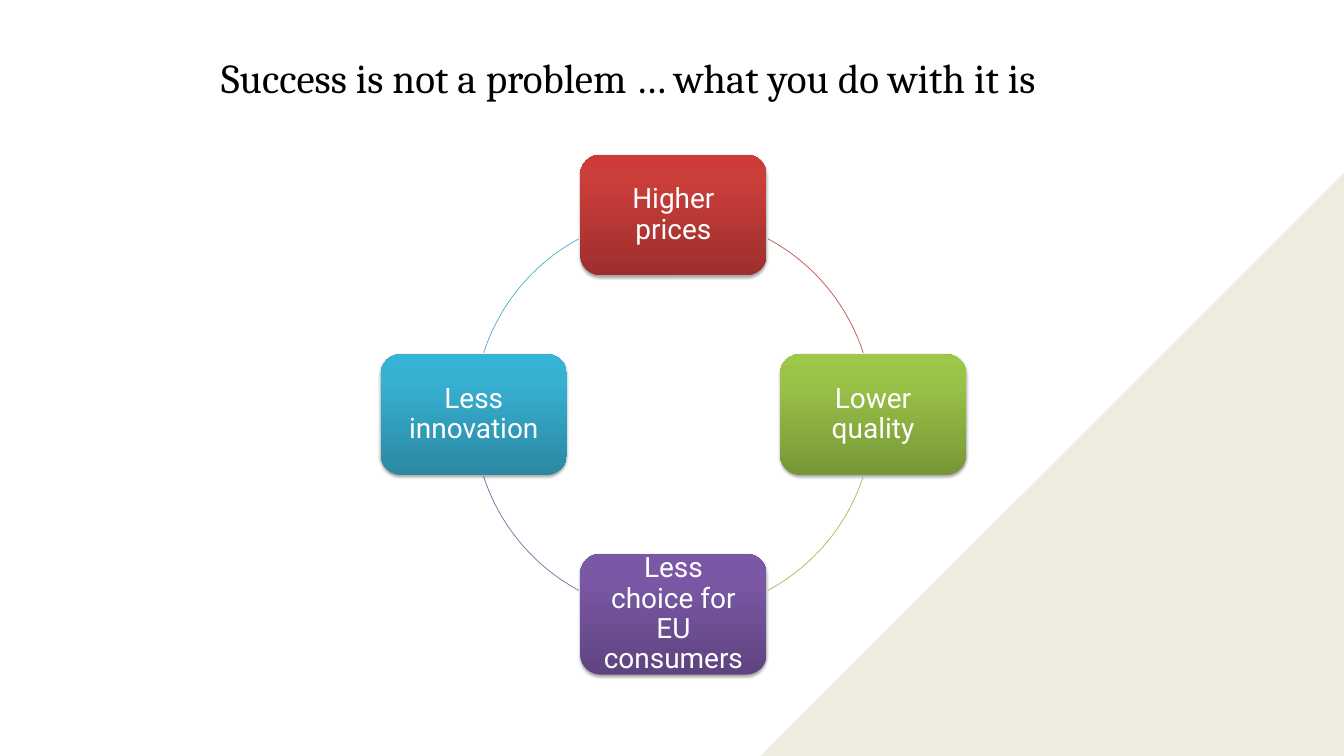
from copy import deepcopy
from math import cos, radians, sin

from lxml import etree
from pptx import Presentation
from pptx.dml.color import RGBColor
from pptx.enum import shapes, text
from pptx.oxml import ns
from pptx.util import Cm, Pt

COLORS = {"text": "000000", "card text": "FFFFFF", "corner": "EEECE1", "shadow": "000000"}

# Clockwise from the top: label, card gradient (bottom to top), colour of the arc that follows
EFFECTS = [
    ("Higher prices", ("9C2F2D", "CB3E3A", "CE3B37"), "C0504D"),
    ("Lower quality", ("779737", "9BC348", "9DC746"), "9BBB59"),
    ("Less choice for EU consumers", ("5F4480", "7B58A6", "7C57A8"), "8064A2"),
    ("Less innovation", ("2A88A2", "37B1D2", "34B4D6"), "4BACC6"),
]
GRADIENT_POSITIONS = (0, 0.8, 1)
CARD_WIDTH, CARD_HEIGHT = 7.04, 4.57
# Arcs stop short of the cards, measured in degrees from the horizontal axis
SIDE_GAP, TOP_GAP = 18, 28.3


def rgb(value):
    return RGBColor.from_string(value)


def add_corner(page, left, top, width, height):
    corner = page.shapes.add_shape(
        shapes.MSO_SHAPE.RECTANGLE, Cm(left), Cm(top), Cm(width), Cm(height))
    corner.rotation = 315
    corner.shadow.inherit = False
    corner.fill.solid()
    corner.fill.fore_color.rgb = rgb(COLORS["corner"])
    corner.line.color.rgb = rgb(COLORS["corner"])
    corner.line.width = Pt(2)


def set_title(page, left, top, width, height):
    title = page.shapes.title
    title.left, title.top, title.width, title.height = map(Cm, (left, top, width, height))
    frame = title.text_frame
    frame.text = "Success is not a problem … what you do with it is"
    frame.word_wrap = True
    frame.auto_size = text.MSO_AUTO_SIZE.SHAPE_TO_FIT_TEXT
    frame.vertical_anchor = text.MSO_ANCHOR.TOP
    para = frame.paragraphs[0]
    para.alignment = text.PP_ALIGN.LEFT
    para.font.size, para.font.name = Pt(44), "Cambria"
    para.font.color.rgb = rgb(COLORS["text"])


def fill_gradient(shape, colors):
    shape.fill.gradient()
    shape.fill.gradient_angle = 90
    # The default gradient has two stops; add a third
    stop_list = shape.fill._xPr.find(ns.qn("a:gradFill")).find(ns.qn("a:gsLst"))
    stop_list.append(deepcopy(stop_list[-1]))
    for stop, position, color in zip(shape.fill.gradient_stops, GRADIENT_POSITIONS, colors):
        stop.position = position
        stop.color.rgb = rgb(color)


def add_shadow(shape):
    shape.shadow.inherit = False
    effects = shape._element.spPr.find(ns.qn("a:effectLst"))
    shadow = etree.SubElement(
        effects, ns.qn("a:outerShdw"), blurRad=str(Pt(3.1)), dist=str(Pt(1.8)),
        dir="5400000", rotWithShape="0")
    color = etree.SubElement(shadow, ns.qn("a:srgbClr"), val=COLORS["shadow"])
    etree.SubElement(color, ns.qn("a:alpha"), val="35000")


def add_card(page, center_x, center_y, label, colors):
    card = page.shapes.add_shape(
        shapes.MSO_SHAPE.ROUNDED_RECTANGLE,
        Cm(center_x - CARD_WIDTH / 2), Cm(center_y - CARD_HEIGHT / 2),
        Cm(CARD_WIDTH), Cm(CARD_HEIGHT))
    fill_gradient(card, colors)
    card.line.fill.background()
    add_shadow(card)

    frame = card.text_frame
    frame.text = label
    frame.word_wrap = True
    frame.vertical_anchor = text.MSO_ANCHOR.MIDDLE
    frame.margin_left = frame.margin_right = Cm(0.53)
    frame.margin_top = frame.margin_bottom = Cm(0.53)
    para = frame.paragraphs[0]
    para.alignment = text.PP_ALIGN.CENTER
    para.line_spacing = 0.9
    para.font.size, para.font.name = Pt(30), "Roboto"
    para.font.color.rgb = rgb(COLORS["card text"])


def add_arc(page, left, top, size, start, end, color):
    arc = page.shapes.add_shape(shapes.MSO_SHAPE.ARC, Cm(left), Cm(top), Cm(size), Cm(size))
    # Angles are stored in 60000ths of a degree, adjustments in 100000ths
    for index, angle in enumerate((start, end)):
        arc.adjustments[index] = angle % 360 * 0.6
    arc.shadow.inherit = False
    arc.fill.background()
    arc.line.color.rgb = rgb(color)
    arc.line.width = Pt(0.75)


def add_cycle(page, left, top, size):
    radius = size / 2
    step = 360 / len(EFFECTS)
    for index, (label, gradient, arc_color) in enumerate(EFFECTS):
        angle = index * step - 90
        add_card(page, left + radius + radius * cos(radians(angle)),
                 top + radius + radius * sin(radians(angle)), label, gradient)
        # Top and bottom cards are wider across the ring than the side cards
        gaps = (TOP_GAP, SIDE_GAP) if index % 2 == 0 else (SIDE_GAP, TOP_GAP)
        add_arc(page, left, top, size, angle + gaps[0], angle + step - gaps[1], arc_color)


def main():
    deck = Presentation()
    deck.slide_width, deck.slide_height = Cm(50.8), Cm(28.58)
    page = deck.slides.add_slide(deck.slide_layouts.get_by_name("Title Only"))
    add_corner(page, 29.24, 14.66, 33.5, 15.77)
    set_title(page, 8.1, 1.85, 34.11, 2.13)
    add_cycle(page, 17.91, 8.13, 15.09)
    deck.save("out.pptx")


if __name__ == "__main__":
    main()
